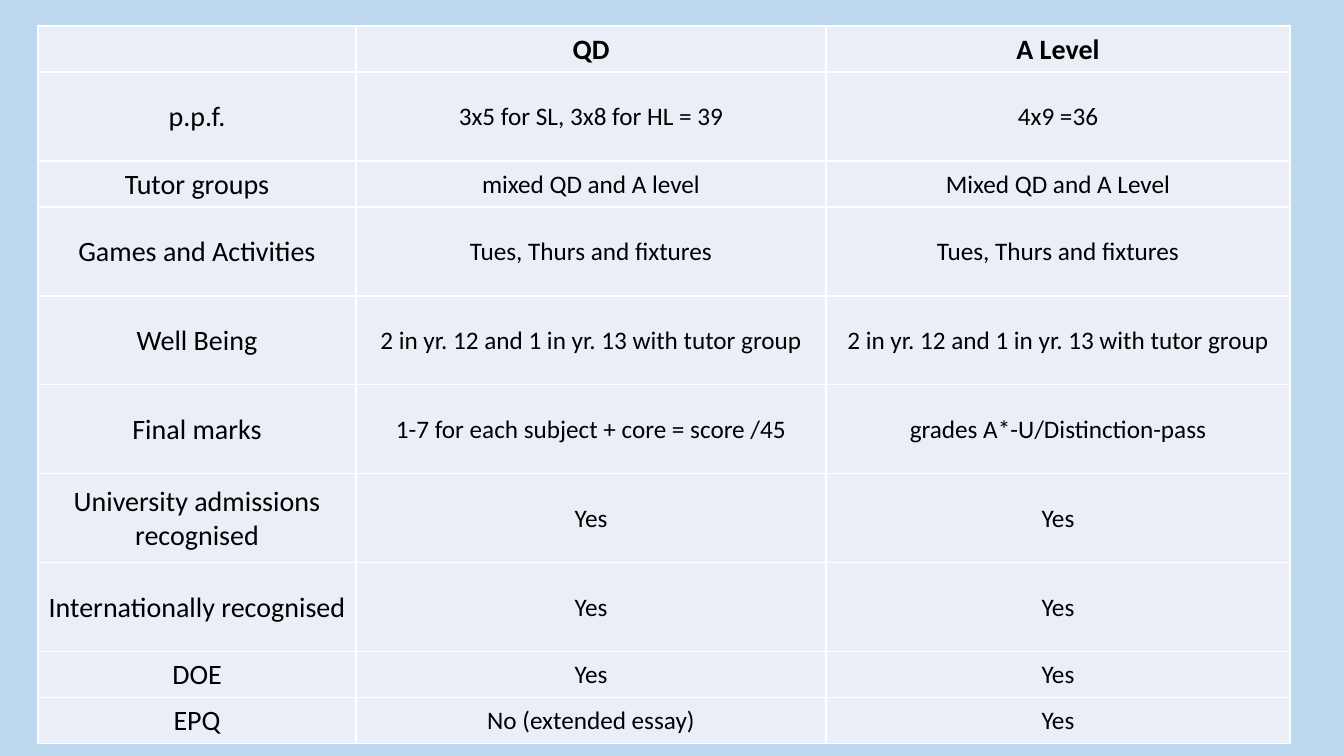
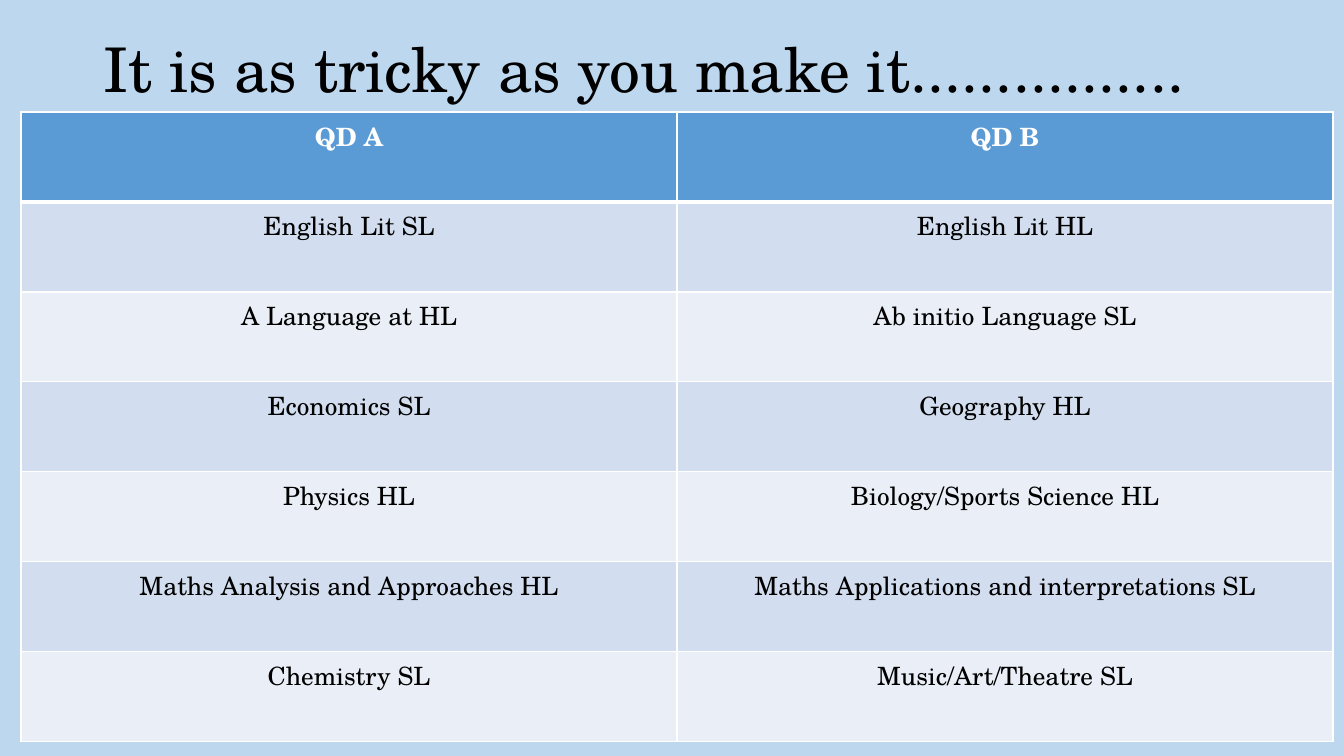
from lxml.etree import SubElement
from pptx import Presentation
from pptx.dml.color import RGBColor
from pptx.enum.text import MSO_ANCHOR as Anchor, MSO_AUTO_SIZE as AutoSize, PP_ALIGN as Align
from pptx.oxml.ns import qn
from pptx.util import Emu, Pt

# Content
COURSE_ROWS = [
    ("", "QD", "A Level"),
    ("p.p.f.", "3x5 for SL, 3x8 for HL = 39", "4x9 =36"),
    ("Tutor groups", "mixed QD and A level", "Mixed QD and A Level"),
    ("Games and Activities", "Tues, Thurs and fixtures", "Tues, Thurs and fixtures"),
    ("Well Being", "2 in yr. 12 and 1 in yr. 13 with tutor group",
     "2 in yr. 12 and 1 in yr. 13 with tutor group"),
    ("Final marks", "1-7 for each subject + core = score /45", "grades A*-U/Distinction-pass"),
    ("University admissions recognised", "Yes", "Yes"),
    ("Internationally recognised", "Yes", "Yes"),
    ("DOE", "Yes", "Yes"),
    ("EPQ", "No (extended essay)", "Yes"),
]
SHORT_ROWS = {0, 2, 8, 9}

TITLE = "It is as tricky as you make it................"
SUBJECT_ROWS = [
    ("QD A", "QD B"),
    ("English Lit SL", "English Lit HL"),
    ("A Language at HL", "Ab initio Language SL"),
    ("Economics SL", "Geography HL"),
    ("Physics HL", "Biology/Sports Science HL"),
    ("Maths Analysis and Approaches HL", "Maths Applications and interpretations SL"),
    ("Chemistry SL", "Music/Art/Theatre SL"),
]

# Shared look
SKY = RGBColor(0xBD, 0xD7, 0xEE)
BLUE = RGBColor(0x5B, 0x9B, 0xD5)
BAND = RGBColor(0xD2, 0xDE, 0xEF)
PALE = RGBColor(0xEA, 0xEF, 0xF7)
WHITE = RGBColor(0xFF, 0xFF, 0xFF)
BLACK = RGBColor(0, 0, 0)
SANS, SERIF = "Calibri", "TeX Gyre Schola"
TITLE_ONLY, BLANK = 5, 6
TIGHT = {"margin_left": 1, "margin_right": 1, "margin_top": 1, "margin_bottom": 0}


def px(length):
    return Emu(round(length * 914400 / 100.8))


def set_all(target, values):
    for name, value in values.items():
        setattr(target, name, value)


def style_font(font, color, **values):
    set_all(font, values)
    font.color.rgb = color


def add_borders(cell, top=1, bottom=1):
    properties = cell._tc.get_or_add_tcPr()
    for side, width in (("L", 1), ("R", 1), ("T", top), ("B", bottom)):
        line = SubElement(properties, qn(f"a:ln{side}"), w=str(Pt(width)))
        fill = SubElement(line, qn("a:solidFill"))
        SubElement(fill, qn("a:srgbClr"), val=str(WHITE))


def add_table(page, left, top, widths, heights, rows, style_cell):
    """style_cell(row, column) gives fill, font, border and cell values."""
    frame = page.shapes.add_table(len(rows), len(widths), px(left), px(top),
                                  px(sum(widths)), px(sum(heights)))
    table = frame.table
    set_all(table, {"first_row": False, "horz_banding": False})
    for column, width in zip(table.columns, widths):
        column.width = px(width)
    for row, height in zip(table.rows, heights):
        row.height = px(height)
    for r, texts in enumerate(rows):
        for c, text in enumerate(texts):
            cell = table.cell(r, c)
            style = style_cell(r, c)
            add_borders(cell, **style.get("borders", {}))
            cell.fill.solid()
            cell.fill.fore_color.rgb = style["fill"]
            set_all(cell, style.get("cell", {}))
            para = cell.text_frame.paragraphs[0]
            para.alignment = Align.CENTER
            if text:
                span = para.add_run()
                span.text = text
                style_font(span.font, **style["font"])


def course_style(row, column):
    size = 20 if row == 0 or column == 0 else 18
    return {
        "fill": PALE,
        "font": {"color": BLACK, "name": SANS, "size": Pt(size), "bold": row == 0},
        "cell": {"vertical_anchor": Anchor.MIDDLE, **{k: px(v) for k, v in TIGHT.items()}},
    }


def subject_style(row, column):
    header = row == 0
    return {
        "fill": BLUE if header else (PALE, BAND)[row % 2],
        "font": {"color": WHITE if header else BLACK, "name": SERIF,
                 "size": Pt(18), "bold": header},
        "borders": {"top": 3 if row == 1 else 1, "bottom": 3 if header else 1},
    }


def add_title(page, text):
    title = page.shapes.title
    set_all(title, {"left": px(93), "top": px(0), "width": px(1159), "height": px(146)})
    set_all(title.text_frame, {"text": text, "word_wrap": True, "auto_size": AutoSize.NONE,
                               "vertical_anchor": Anchor.MIDDLE})
    para = title.text_frame.paragraphs[0]
    set_all(para, {"alignment": Align.LEFT, "line_spacing": 0.9})
    style_font(para.runs[0].font, BLACK, name=SERIF, size=Pt(44))


def main():
    deck = Presentation()
    set_all(deck, {"slide_width": px(1344), "slide_height": px(756)})
    background = deck.slide_master.background.fill
    background.solid()
    background.fore_color.rgb = SKY

    # Course comparison
    page = deck.slides.add_slide(deck.slide_layouts[BLANK])
    heights = [46 if row in SHORT_ROWS else 89 for row in range(len(COURSE_ROWS))]
    add_table(page, 38, 26, [318, 470, 464], heights, COURSE_ROWS, course_style)

    # Subject choices
    page = deck.slides.add_slide(deck.slide_layouts[TITLE_ONLY])
    add_title(page, TITLE)
    add_table(page, 21, 112, [656] * 2, [90] * len(SUBJECT_ROWS), SUBJECT_ROWS, subject_style)

    deck.save("out.pptx")


if __name__ == "__main__":
    main()
